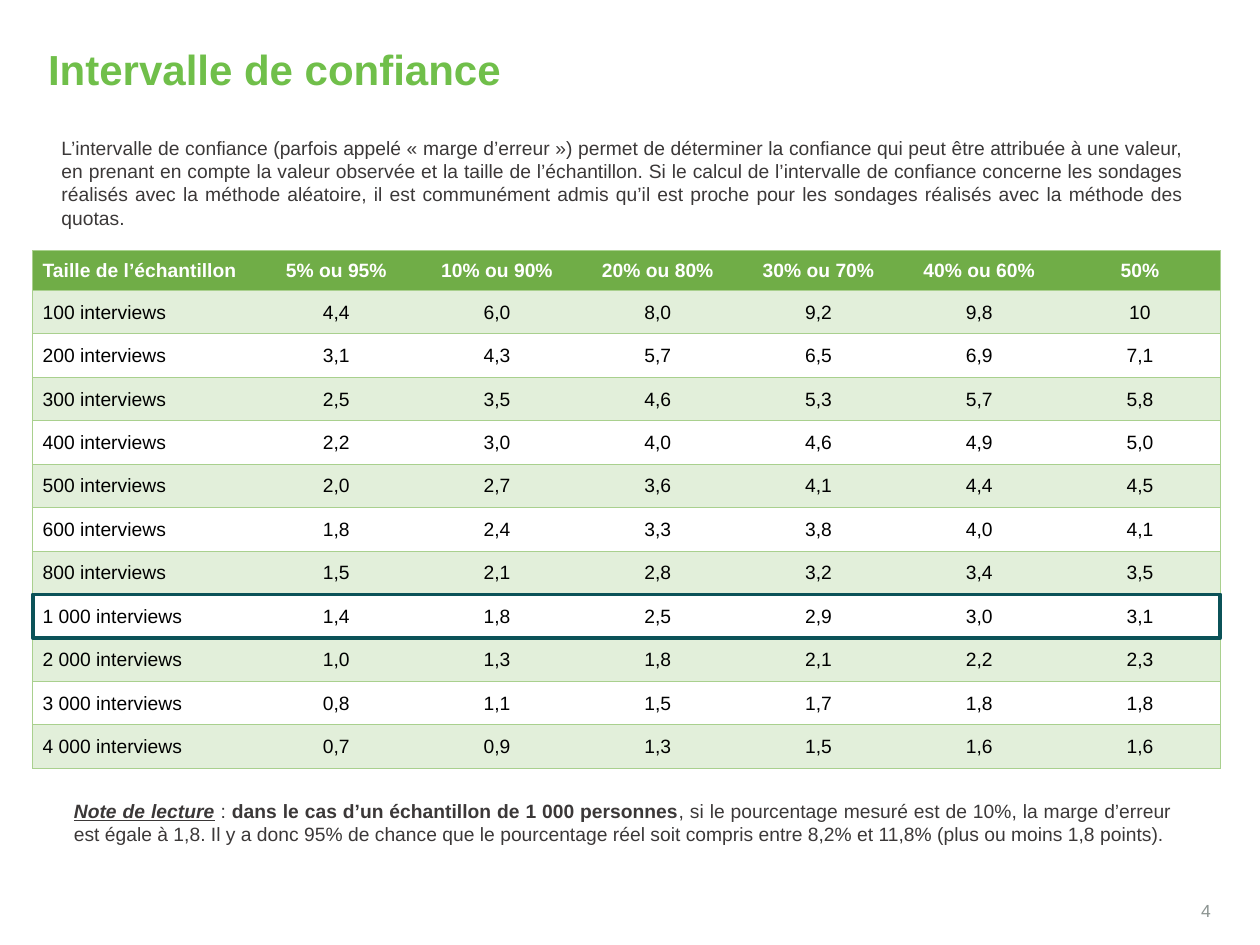
from lxml.etree import SubElement
from pptx import Presentation
from pptx.dml.color import RGBColor
from pptx.enum.shapes import MSO_SHAPE
from pptx.enum.text import MSO_ANCHOR, PP_ALIGN
from pptx.oxml.ns import qn
from pptx.util import Cm, Pt

FONT = "Arial"
TITLE_GREEN = RGBColor(0x70, 0xBF, 0x4A)
HEADER_GREEN = RGBColor(0x70, 0xAD, 0x47)
BAND_GREEN = RGBColor(0xE2, 0xEF, 0xDA)
RULE_GREEN = RGBColor(0xA9, 0xD0, 0x8E)
DEEP_TEAL = RGBColor(0x0B, 0x52, 0x58)
TEXT_GREY = RGBColor(0x3B, 0x38, 0x38)
NUMBER_GREY = RGBColor(0x8C, 0x94, 0x91)
WHITE = RGBColor(0xFF, 0xFF, 0xFF)
BLACK = RGBColor(0, 0, 0)
NO_GRID_STYLE = "{2D5ABB26-0587-4C30-8999-92F81FD0307C}"

TITLE_BOX = (0.97, 0.99, 18.77, 0.91)
INTRO_BOX = (1.24, 2.54, 22.63, 2.29)
TABLE_BOX = (0.66, 5.05, 23.94, 10.44)
NOTE_BOX = (1.24, 15.98, 22.63, 1.19)
NUMBER_BOX = (23.29, 17.96, 1.12, 0.61)

FIRST_COLUMN = 4.5
HEADER_HEIGHT = 0.8
HIGHLIGHTED_SIZE = "1 000"

INTRO = (
    "L’intervalle de confiance (parfois appelé « marge d’erreur ») permet de déterminer "
    "la confiance qui peut être attribuée à une valeur, en prenant en compte la valeur "
    "observée et la taille de l’échantillon. Si le calcul de l’intervalle de confiance "
    "concerne les sondages réalisés avec la méthode aléatoire, il est communément admis "
    "qu’il est proche pour les sondages réalisés avec la méthode des quotas."
)
NOTE = [
    ("Note de lecture", True, True),
    (" : ", False, False),
    ("dans le cas d’un échantillon de 1 000 personnes", True, False),
    (", si le pourcentage mesuré est de 10%, la marge d’erreur est égale à 1,8. "
     "Il y a donc 95% de chance que le pourcentage réel soit compris entre 8,2% et "
     "11,8% (plus ou moins 1,8 points).", False, False),
]
HEADERS = ["Taille de l’échantillon", "5% ou 95%", "10% ou 90%", "20% ou 80%",
           "30% ou 70%", "40% ou 60%", "50%"]
MARGINS = {
    "100": "4,4 6,0 8,0 9,2 9,8 10",
    "200": "3,1 4,3 5,7 6,5 6,9 7,1",
    "300": "2,5 3,5 4,6 5,3 5,7 5,8",
    "400": "2,2 3,0 4,0 4,6 4,9 5,0",
    "500": "2,0 2,7 3,6 4,1 4,4 4,5",
    "600": "1,8 2,4 3,3 3,8 4,0 4,1",
    "800": "1,5 2,1 2,8 3,2 3,4 3,5",
    "1 000": "1,4 1,8 2,5 2,9 3,0 3,1",
    "2 000": "1,0 1,3 1,8 2,1 2,2 2,3",
    "3 000": "0,8 1,1 1,5 1,7 1,8 1,8",
    "4 000": "0,7 0,9 1,3 1,5 1,6 1,6",
}


def style_font(font, size, color, bold=False):
    """Set the typeface, size, colour and weight of a font."""
    font.name = FONT
    font.size = Pt(size)
    font.bold = bold
    font.color.rgb = color


def add_text(page, box, pieces, size, color, align, anchor, inset=0):
    """Add a one-paragraph text box made of (text, bold, emphasis) pieces."""
    frame = page.shapes.add_textbox(*map(Cm, box)).text_frame
    frame.word_wrap = True
    frame.vertical_anchor = anchor
    frame.margin_left = frame.margin_right = Cm(inset)
    frame.margin_top = frame.margin_bottom = Cm(inset / 2)
    para = frame.paragraphs[0]
    para.alignment = align
    for text, bold, emphasis in pieces:
        span = para.add_run()
        span.text = text
        style_font(span.font, size, color, bold)
        span.font.italic = span.font.underline = emphasis
    return para


def add_title(page, box):
    """Add the slide heading."""
    para = add_text(page, box, [("Intervalle de confiance", True, False)], 24,
                    TITLE_GREEN, PP_ALIGN.LEFT, MSO_ANCHOR.TOP)
    para.line_spacing = 0.9


def draw_border(cell, side):
    """Draw a thin green rule on one side of a cell."""
    line = SubElement(cell._tc.get_or_add_tcPr(), qn(f"a:ln{side}"), w=str(Pt(0.5)))
    fill = SubElement(line, qn("a:solidFill"))
    SubElement(fill, qn("a:srgbClr"), val=str(RULE_GREEN))


def fill_cell(cell, text, row, column):
    """Write one table cell and style it by its place in the grid."""
    cell.text = text
    cell.vertical_anchor = MSO_ANCHOR.MIDDLE
    cell.margin_left = Cm(0.02 if column else 0.2)
    cell.margin_right = cell.margin_top = Cm(0.02)
    cell.margin_bottom = 0
    para = cell.text_frame.paragraphs[0]
    para.alignment = PP_ALIGN.CENTER if column else PP_ALIGN.LEFT
    style_font(para.runs[0].font, 11, BLACK if row else WHITE, bold=row == 0)
    if column == 0:
        draw_border(cell, "L")
    if column == len(HEADERS) - 1:
        draw_border(cell, "R")
    draw_border(cell, "T")
    draw_border(cell, "B")
    if row and row % 2 == 0:
        cell.fill.background()
    else:
        cell.fill.solid()
        cell.fill.fore_color.rgb = BAND_GREEN if row else HEADER_GREEN


def add_margin_table(page, box):
    """Add the table of margins of error by sample size."""
    width, height = box[2:]
    rows = [HEADERS] + [[f"{size} interviews", *values.split()]
                        for size, values in MARGINS.items()]
    table = page.shapes.add_table(len(rows), len(HEADERS), *map(Cm, box)).table
    table.first_row = table.horz_banding = False
    table._tbl.tblPr.find(qn("a:tableStyleId")).text = NO_GRID_STYLE
    for index, column in enumerate(table.columns):
        column.width = Cm((width - FIRST_COLUMN) / (len(HEADERS) - 1) if index else FIRST_COLUMN)
    for index, row in enumerate(table.rows):
        row.height = Cm((height - HEADER_HEIGHT) / len(MARGINS) if index else HEADER_HEIGHT)
    for row, texts in enumerate(rows):
        for column, text in enumerate(texts):
            fill_cell(table.cell(row, column), text, row, column)


def add_highlight(page, box):
    """Outline the highlighted sample size within the table box."""
    left, top, width, height = box
    row_height = (height - HEADER_HEIGHT) / len(MARGINS)
    row_top = top + HEADER_HEIGHT + list(MARGINS).index(HIGHLIGHTED_SIZE) * row_height
    frame = page.shapes.add_shape(MSO_SHAPE.RECTANGLE, Cm(left), Cm(row_top),
                                  Cm(width), Cm(row_height))
    frame.shadow.inherit = False
    frame.fill.background()
    frame.line.color.rgb = DEEP_TEAL
    frame.line.width = Pt(2.25)


def build_slide(deck):
    """Add the confidence interval slide."""
    page = deck.slides.add_slide(deck.slide_layouts[6])
    add_text(page, NUMBER_BOX, [("4", False, False)], 10, NUMBER_GREY,
             PP_ALIGN.RIGHT, MSO_ANCHOR.BOTTOM)
    add_title(page, TITLE_BOX)
    add_text(page, NOTE_BOX, NOTE, 11, TEXT_GREY, PP_ALIGN.JUSTIFY,
             MSO_ANCHOR.MIDDLE, inset=0.25)
    add_margin_table(page, TABLE_BOX)
    add_text(page, INTRO_BOX, [(INTRO, False, False)], 11, TEXT_GREY,
             PP_ALIGN.JUSTIFY, MSO_ANCHOR.MIDDLE)
    add_highlight(page, TABLE_BOX)


def main():
    """Build and save the deck."""
    deck = Presentation()
    deck.slide_width, deck.slide_height = Cm(25.4), Cm(19.05)
    build_slide(deck)
    deck.save("out.pptx")


if __name__ == "__main__":
    main()
